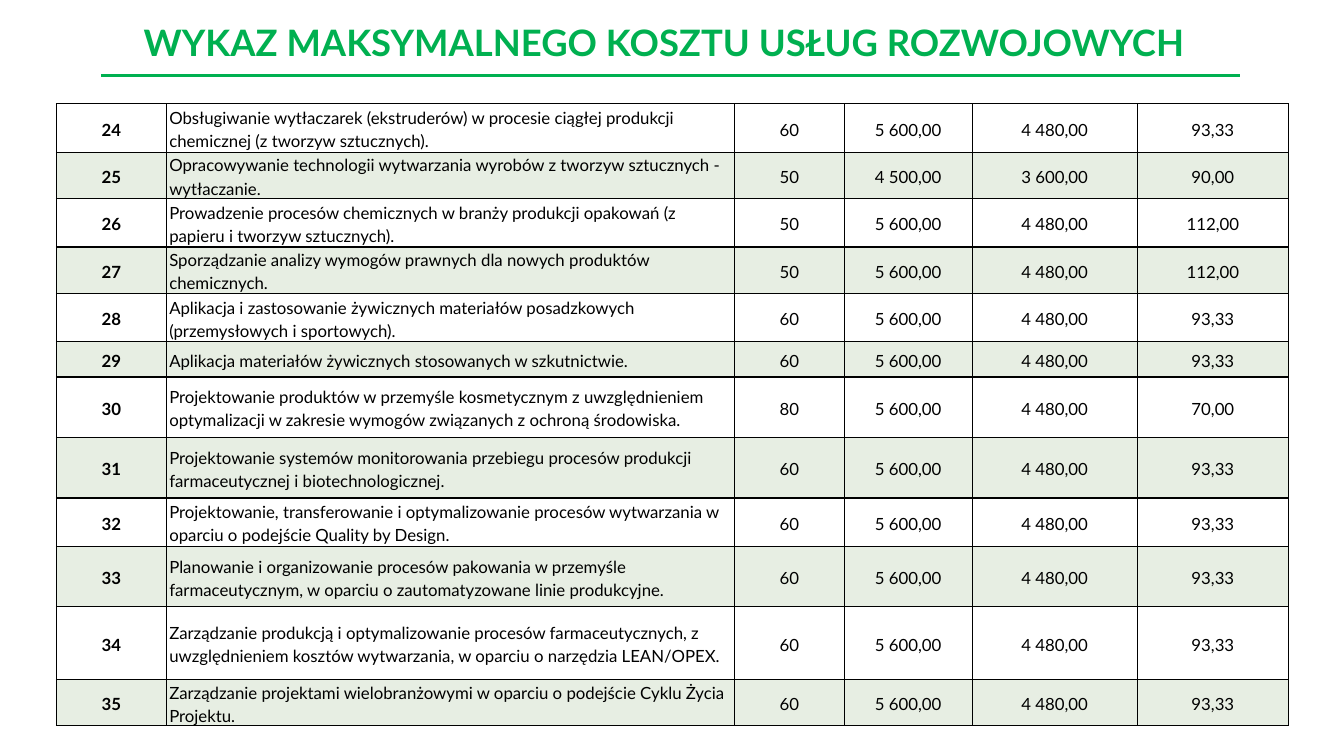
from lxml import etree
from pptx import Presentation
from pptx import util as u
from pptx.dml.color import RGBColor
from pptx.enum import shapes, text
from pptx.oxml import parse_xml
from pptx.oxml.ns import nsdecls, qn

COLORS = {"green": "00B050", "band": "8BAE77", "black": "000000"}
FONT = "Lato"
BAND_ALPHA = 20000  # thousandths of a percent

TITLE = "WYKAZ MAKSYMALNEGO KOSZTU USŁUG ROZWOJOWYCH"
COLUMN_WIDTHS = [1.09, 5.64, 1.09, 1.27, 1.64, 1.5]
SHORT, MEDIUM, TALL, TALLEST = 0.35, 0.48, 0.6, 0.72
FIRST_NUMBER = 24

# Row height, service, hours, total cost, funding, cost per hour
SERVICES = [
    (MEDIUM, "Obsługiwanie wytłaczarek (ekstruderów) w procesie ciągłej produkcji chemicznej "
     "(z tworzyw sztucznych).", "60", "5 600,00", "4 480,00", "93,33"),
    (SHORT, "Opracowywanie technologii wytwarzania wyrobów z tworzyw sztucznych - wytłaczanie.",
     "50", "4 500,00", "3 600,00", "90,00"),
    (MEDIUM, "Prowadzenie procesów chemicznych w branży produkcji opakowań "
     "(z papieru i tworzyw sztucznych).", "50", "5 600,00", "4 480,00", "112,00"),
    (SHORT, "Sporządzanie analizy wymogów prawnych dla nowych produktów chemicznych.",
     "50", "5 600,00", "4 480,00", "112,00"),
    (MEDIUM, "Aplikacja i zastosowanie żywicznych materiałów posadzkowych "
     "(przemysłowych i sportowych).", "60", "5 600,00", "4 480,00", "93,33"),
    (SHORT, "Aplikacja materiałów żywicznych stosowanych w szkutnictwie.",
     "60", "5 600,00", "4 480,00", "93,33"),
    (TALL, "Projektowanie produktów w przemyśle kosmetycznym z uwzględnieniem optymalizacji "
     "w zakresie wymogów związanych z ochroną środowiska.", "80", "5 600,00", "4 480,00", "70,00"),
    (TALL, "Projektowanie systemów monitorowania przebiegu procesów produkcji farmaceutycznej "
     "i biotechnologicznej.", "60", "5 600,00", "4 480,00", "93,33"),
    (MEDIUM, "Projektowanie, transferowanie i optymalizowanie procesów wytwarzania w oparciu "
     "o podejście Quality by Design.", "60", "5 600,00", "4 480,00", "93,33"),
    (TALL, "Planowanie i organizowanie procesów pakowania w przemyśle farmaceutycznym, "
     "w oparciu o zautomatyzowane linie produkcyjne.", "60", "5 600,00", "4 480,00", "93,33"),
    (TALLEST, "Zarządzanie produkcją i optymalizowanie procesów farmaceutycznych, "
     "z uwzględnieniem kosztów wytwarzania, w oparciu o narzędzia LEAN/OPEX.",
     "60", "5 600,00", "4 480,00", "93,33"),
    (SHORT, "Zarządzanie projektami wielobranżowymi w oparciu o podejście Cyklu Życia Projektu.",
     "60", "5 600,00", "4 480,00", "93,33"),
]


def write_text(frame, content, size=12, color="black", bold=False, centred=True, spacing=1.15):
    frame.word_wrap = True
    paragraph = frame.paragraphs[0]
    paragraph.alignment = text.PP_ALIGN.CENTER if centred else text.PP_ALIGN.LEFT
    paragraph.line_spacing = spacing
    run = paragraph.add_run()
    run.text = content
    run.font.name = FONT
    run.font.size = u.Pt(size)
    run.font.bold = bold
    run.font.color.rgb = RGBColor.from_string(COLORS[color])


def add_title(slide, left, top, width, height):
    title = slide.shapes.title
    title.left, title.top = u.Inches(left), u.Inches(top)
    title.width, title.height = u.Inches(width), u.Inches(height)
    title.text_frame.vertical_anchor = text.MSO_ANCHOR.MIDDLE
    title.text_frame.auto_size = text.MSO_AUTO_SIZE.NONE
    write_text(title.text_frame, TITLE, size=26, color="green", bold=True, spacing=0.9)

    # Rule under the title
    rule_y, margin = u.Inches(top + height + 0.01), 0.06
    rule = slide.shapes.add_connector(
        shapes.MSO_CONNECTOR.STRAIGHT, u.Inches(left + margin), rule_y,
        u.Inches(left + width + margin), rule_y)
    rule.line.color.rgb = RGBColor.from_string(COLORS["green"])
    rule.line.width = u.Pt(2.25)
    etree.SubElement(rule._element.spPr, qn("a:effectLst"))


def style_cell(cell, banded):
    cell.vertical_anchor = text.MSO_ANCHOR.MIDDLE
    cell.margin_left = cell.margin_right = u.Inches(0.03)
    cell.margin_top = cell.margin_bottom = 0
    properties = cell._tc.get_or_add_tcPr()
    for side in ("lnL", "lnR", "lnT", "lnB"):
        properties.append(parse_xml(
            f'<a:{side} {nsdecls("a")} w="{u.Pt(1)}"><a:solidFill>'
            f'<a:srgbClr val="{COLORS["black"]}"/></a:solidFill></a:{side}>'))
    if banded:
        cell.fill.solid()
        cell.fill.fore_color.rgb = RGBColor.from_string(COLORS["band"])
        color = properties.find(f'{qn("a:solidFill")}/{qn("a:srgbClr")}')
        etree.SubElement(color, qn("a:alpha"), val=str(BAND_ALPHA))
    else:
        cell.fill.background()


def add_cost_table(slide, left, top, width, height):
    frame = slide.shapes.add_table(
        len(SERVICES), len(COLUMN_WIDTHS), u.Inches(left), u.Inches(top),
        u.Inches(width), u.Inches(height))
    table = frame.table
    table.first_row = table.horz_banding = False
    for column, share in zip(table.columns, COLUMN_WIDTHS):
        column.width = u.Inches(width * share / sum(COLUMN_WIDTHS))
    for index, (row_height, *values) in enumerate(SERVICES):
        table.rows[index].height = u.Inches(row_height)
        for position, value in enumerate([str(FIRST_NUMBER + index), *values]):
            cell = table.cell(index, position)
            style_cell(cell, banded=index % 2 == 1)
            write_text(cell.text_frame, value, bold=position == 0, centred=position != 1)
    frame.height = u.Inches(height)


def main():
    presentation = Presentation()
    presentation.slide_width, presentation.slide_height = u.Inches(13.33), u.Inches(7.5)
    slide = presentation.slides.add_slide(presentation.slide_layouts[5])
    add_title(slide, 0.94, 0.14, 11.3, 0.6)
    add_cost_table(slide, 0.56, 1.03, 12.22, 6.1)
    presentation.save("out.pptx")


if __name__ == "__main__":
    main()
